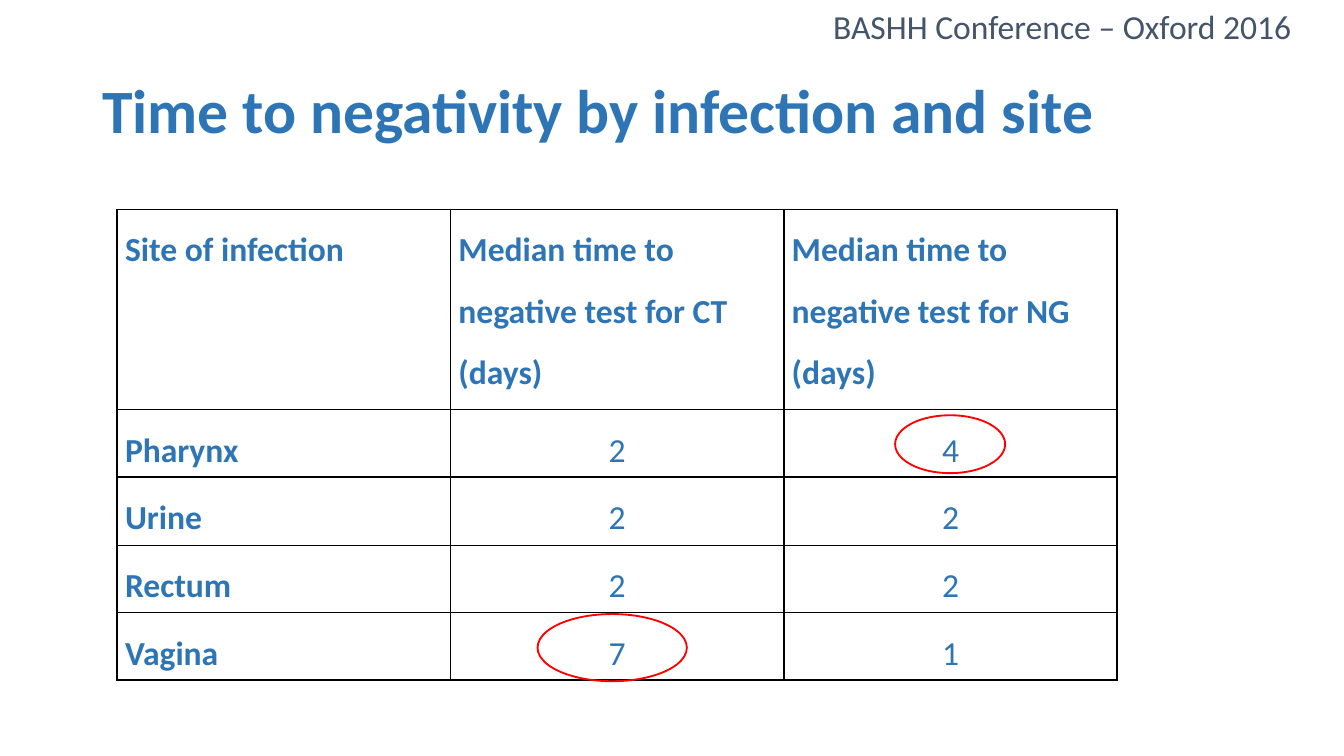
from lxml import etree
from pptx import Presentation
from pptx.dml.color import RGBColor
from pptx.enum.shapes import MSO_SHAPE
from pptx.enum.text import MSO_ANCHOR, PP_ALIGN
from pptx.oxml.ns import qn
from pptx.util import Pt

OVAL = MSO_SHAPE.OVAL
TOP, MIDDLE = MSO_ANCHOR.TOP, MSO_ANCHOR.MIDDLE
LEFT, CENTER = PP_ALIGN.LEFT, PP_ALIGN.CENTER

BLUE, SLATE, RED, BLACK, WHITE = "2E75B6", "44546A", "FF0000", "000000", "FFFFFF"
SIDES = ("a:lnL", "a:lnR", "a:lnT", "a:lnB")

ROWS = [
    ("Site of infection", "Median time to negative test for CT (days)",
     "Median time to negative test for NG (days)"),
    ("Pharynx", "2", "4"),
    ("Urine", "2", "2"),
    ("Rectum", "2", "2"),
    ("Vagina", "7", "1"),
]
HEIGHTS = (107.3, 36, 36.7, 36, 36)
WIDTH = 178.6
RINGS = [(288, 329, 80, 36), (479.5, 222.5, 59, 31)]


def color(code):
    return RGBColor.from_string(code)


def apply(item, values):
    for name, value in values.items():
        setattr(item, name, value)


def write(frame, text, size, code, bold=False, align=LEFT, space=1.0):
    frame.text = text
    para = frame.paragraphs[0]
    apply(para, {"alignment": align, "line_spacing": space})
    font = para.runs[0].font
    apply(font, {"name": "Calibri", "size": Pt(size), "bold": bold})
    font.color.rgb = color(code)


def inset(item, side, edge):
    apply(item, {"margin_left": Pt(side), "margin_right": Pt(side),
                 "margin_top": Pt(edge), "margin_bottom": Pt(edge)})


def add_header(slide):
    box = slide.shapes.add_textbox(Pt(441.3), Pt(0), Pt(262), Pt(37.4))
    frame = box.text_frame
    frame.word_wrap = True
    inset(frame, 5, 3)
    write(frame, "BASHH Conference – Oxford 2016", 18, SLATE)


def set_title(slide):
    title = slide.shapes.title
    apply(title, {"left": Pt(49.7), "top": Pt(21.6),
                  "width": Pt(620.6), "height": Pt(78.5)})
    frame = title.text_frame
    frame.vertical_anchor = MIDDLE
    inset(frame, 5, 3)
    write(frame, "Time to negativity by infection and site", 33, BLUE,
          bold=True, space=0.9)


def add_border(cell):
    """Draw a thin black line on all four sides of the cell."""
    props = cell._tc.get_or_add_tcPr()
    for spot, side in enumerate(SIDES):
        line = etree.Element(qn(side), w=str(Pt(1)))
        fill = etree.SubElement(line, qn("a:solidFill"))
        etree.SubElement(fill, qn("a:srgbClr"), val=BLACK)
        props.insert(spot, line)


def fill_cell(cell, text, head, label):
    cell.vertical_anchor = TOP
    inset(cell, 4.2, 0)
    cell.fill.solid()
    cell.fill.fore_color.rgb = color(WHITE)
    write(cell.text_frame, text, 18, BLUE, bold=head or label,
          align=LEFT if head or label else CENTER, space=1.5)
    add_border(cell)


def add_grid(slide):
    cols = len(ROWS[0])
    table = slide.shapes.add_table(
        len(ROWS), cols, Pt(62.8), Pt(112.2),
        Pt(WIDTH * cols), Pt(sum(HEIGHTS))).table
    for col in table.columns:
        col.width = Pt(WIDTH)
    for r, (row, height) in enumerate(zip(ROWS, HEIGHTS)):
        table.rows[r].height = Pt(height)
        for c, text in enumerate(row):
            fill_cell(table.cell(r, c), text, head=r == 0, label=c == 0)


def add_ring(slide, place):
    ring = slide.shapes.add_shape(OVAL, *map(Pt, place))
    ring.shadow.inherit = False
    ring.fill.background()
    ring.line.color.rgb = color(RED)
    ring.line.width = Pt(1)


def main():
    deck = Presentation()
    apply(deck, {"slide_width": Pt(720), "slide_height": Pt(405)})
    slide = deck.slides.add_slide(deck.slide_layouts[5])
    add_header(slide)
    set_title(slide)
    add_grid(slide)
    for place in RINGS:
        add_ring(slide, place)
    deck.save("out.pptx")


if __name__ == "__main__":
    main()
